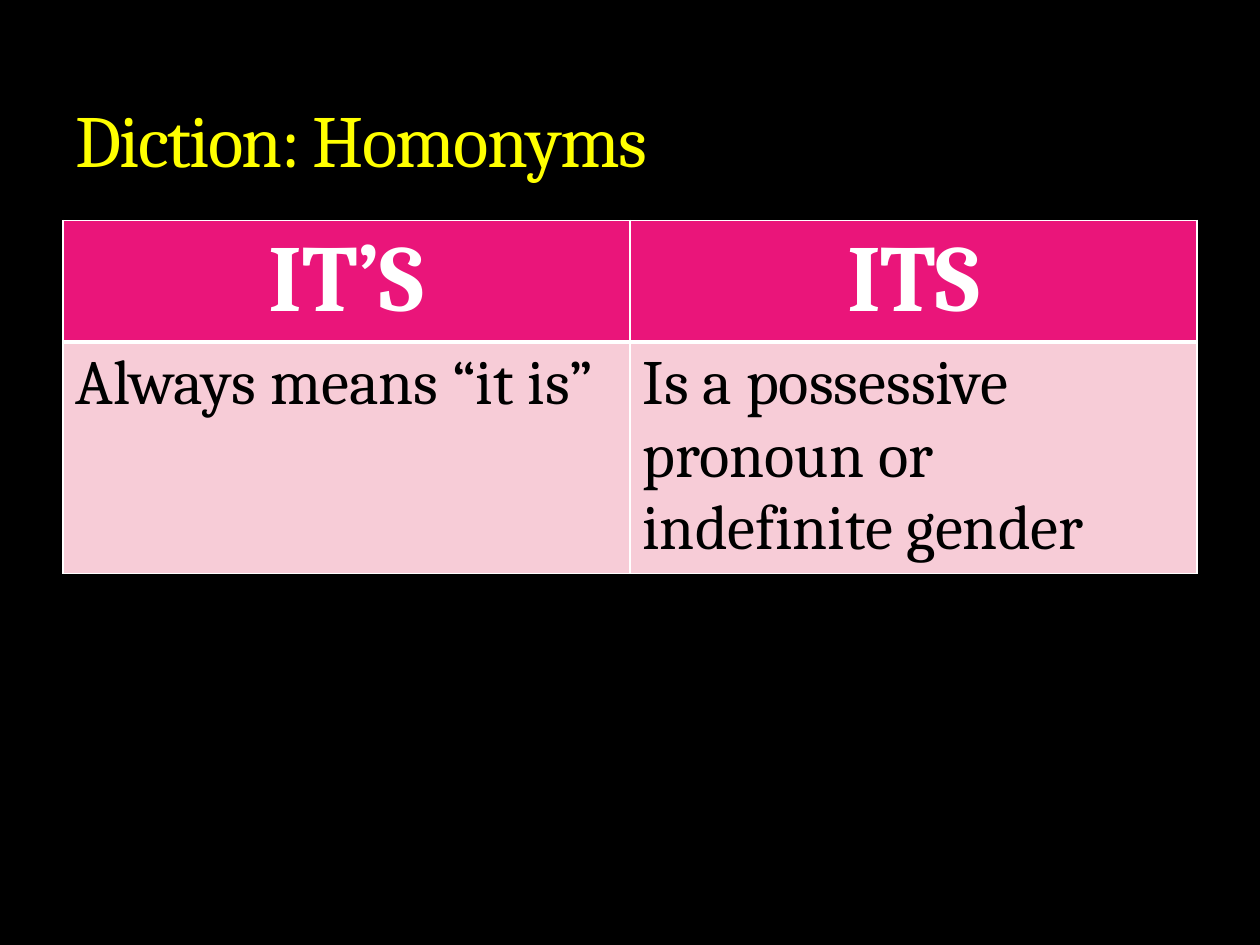
"""Build a slide that sets two homonyms side by side in a table."""
from dataclasses import dataclass

from lxml import etree
from pptx import Presentation
from pptx import util as u
from pptx.dml.color import RGBColor
from pptx.enum import text
from pptx.oxml.ns import qn

BLACK = RGBColor(0, 0, 0)
WHITE = RGBColor(255, 255, 255)
YELLOW = RGBColor(255, 255, 0)
PINK = RGBColor(0xEA, 0x15, 0x7A)
ROSE = RGBColor(0xF7, 0xCC, 0xD7)
FONT = "Cambria"
WIDE, HIGH = u.Inches(10), u.Inches(7.5)
LEFT, SPAN = int(WIDE * 0.05), int(WIDE * 0.9)


@dataclass(frozen=True)
class Row:
    """A table row with its wording and look."""
    words: tuple[str, ...]
    high: float
    size: int
    fill: RGBColor
    ink: RGBColor
    bold: bool
    align: text.PP_ALIGN
    base: float


ROWS = (
    Row(("IT’S", "ITS"), 0.95, 54, PINK, WHITE, True, text.PP_ALIGN.CENTER, 3),
    Row(("Always means “it is”", "Is a possessive pronoun or indefinite gender"),
        1.84, 36, ROSE, BLACK, False, text.PP_ALIGN.LEFT, 1),
)


def style(para, size: int, ink: RGBColor, bold: bool) -> None:
    """Format every run of a paragraph."""
    for run in para.runs:
        font = run.font
        font.name, font.size, font.bold = FONT, u.Pt(size), bold
        font.color.rgb = ink


def edge(cell, sides: dict[str, float]) -> None:
    """Draw white borders of the given point widths around a cell."""
    props = cell._tc.get_or_add_tcPr()
    for spot, (side, width) in enumerate(sides.items()):
        line = etree.Element(qn(f"a:{side}"), w=str(u.Pt(width)))
        fill = etree.SubElement(line, qn("a:solidFill"))
        etree.SubElement(fill, qn("a:srgbClr"), val=str(WHITE))
        props.insert(spot, line)


def head(slide, words: str) -> None:
    """Place and format the title."""
    title = slide.shapes.title
    title.left, title.top = LEFT, u.Inches(0.17)
    title.width, title.height = SPAN, u.Inches(1.33)
    frame = title.text_frame
    frame.text = words
    frame.vertical_anchor = text.MSO_ANCHOR.BOTTOM
    para = frame.paragraphs[0]
    para.alignment = text.PP_ALIGN.LEFT
    style(para, 42, YELLOW, False)
    para.runs[0].font._element.set("spc", "-100")


def grid(slide, rows: tuple[Row, ...]) -> None:
    """Add the table and fill its cells."""
    cols = len(rows[0].words)
    tall = u.Inches(sum(row.high for row in rows))
    table = slide.shapes.add_table(
        len(rows), cols, LEFT, u.Inches(1.75), SPAN, tall).table
    top = 1
    for r, row in enumerate(rows):
        table.rows[r].height = u.Inches(row.high)
        for c, words in enumerate(row.words):
            cell = table.cell(r, c)
            cell.fill.solid()
            cell.fill.fore_color.rgb = row.fill
            cell.text_frame.text = words
            para = cell.text_frame.paragraphs[0]
            para.alignment = row.align
            style(para, row.size, row.ink, row.bold)
            edge(cell, {"lnL": 1, "lnR": 1, "lnT": top, "lnB": row.base})
        top = row.base


def main() -> None:
    """Build and save the deck."""
    deck = Presentation()
    deck.slide_width, deck.slide_height = WIDE, HIGH
    slide = deck.slides.add_slide(deck.slide_layouts[5])
    back = slide.background.fill
    back.solid()
    back.fore_color.rgb = BLACK
    grid(slide, ROWS)
    head(slide, "Diction: Homonyms")
    deck.save("out.pptx")


if __name__ == "__main__":
    main()
